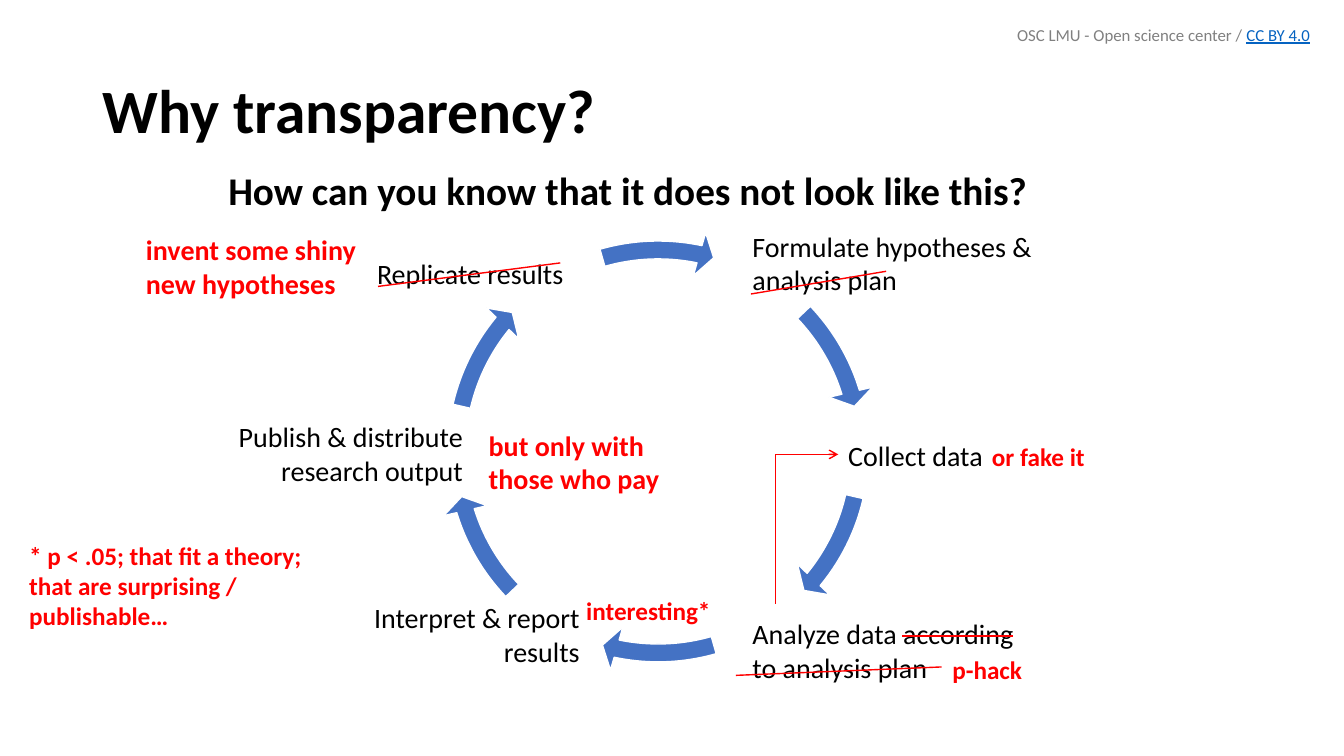
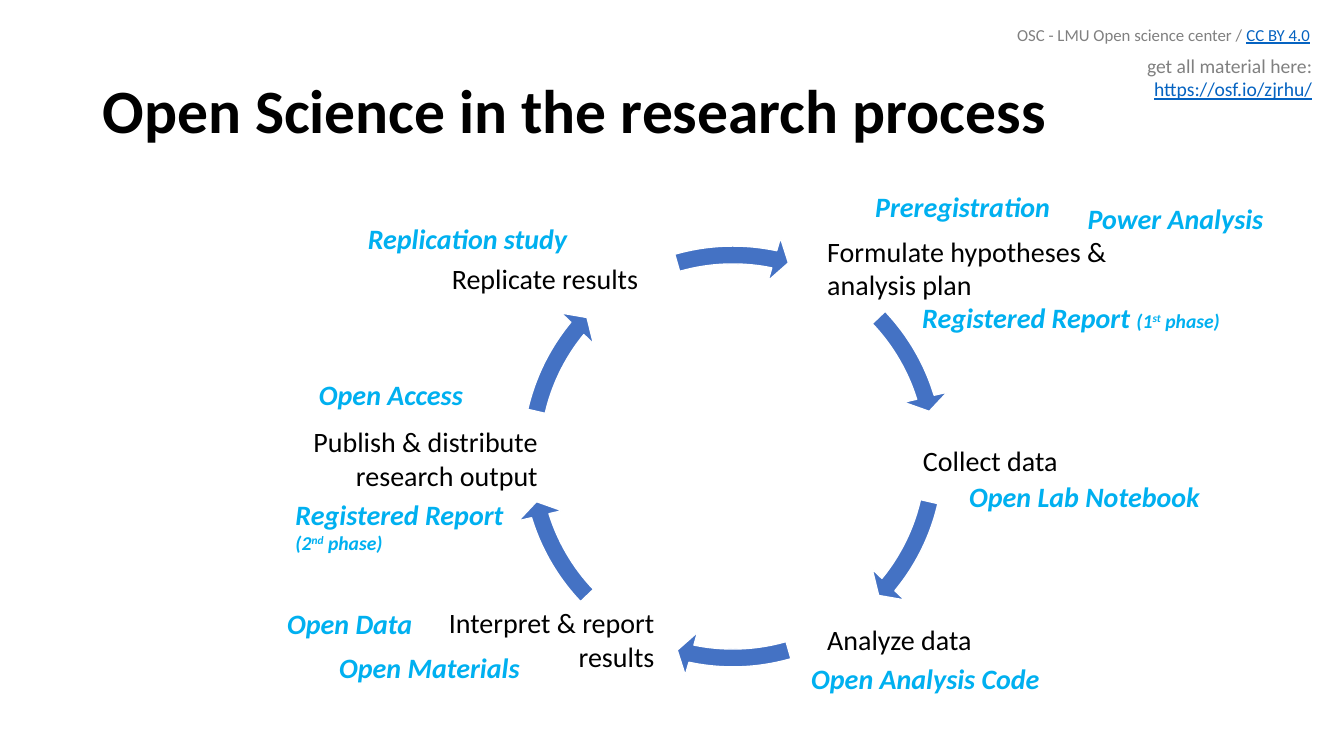
from lxml.etree import SubElement
from pptx import Presentation
from pptx.dml.color import RGBColor
from pptx.enum.shapes import MSO_CONNECTOR as Connector, MSO_SHAPE as Preset
from pptx.enum.text import MSO_ANCHOR as Anchor, MSO_AUTO_SIZE as AutoSize, PP_ALIGN as Align
from pptx.oxml.ns import qn
from pptx.util import Inches, Pt

# Grid: 160 columns by 90 rows of square cells
COLUMNS, ROWS = 160, 90
SLIDE_HEIGHT = Inches(7.5)
CELL = SLIDE_HEIGHT // ROWS
SLIDE_WIDTH = CELL * COLUMNS

BLACK = RGBColor(0x00, 0x00, 0x00)
WHITE = RGBColor(0xFF, 0xFF, 0xFF)
GREY = RGBColor(0x80, 0x80, 0x80)
RED = RGBColor(0xFF, 0x00, 0x00)
CYAN = RGBColor(0x00, 0xB0, 0xF0)
ARROW_BLUE = RGBColor(0x44, 0x72, 0xC4)
LINK_BLUE = RGBColor(0x05, 0x63, 0xC1)

# Text formats
TITLE = {"size": 44, "color": BLACK, "bold": True}
QUESTION = {"size": 28, "color": BLACK, "bold": True}
STEP = {"size": 20, "color": BLACK}
DOUBT = {"size": 20, "color": RED, "bold": True}
SMALL_DOUBT = {**DOUBT, "size": 18}
PRACTICE = {"size": 20, "color": CYAN, "bold": True, "italic": True}
PHASE = {"size": 14}
RAISED = {"size": 14, "raised": True}
CREDIT = {"size": 12, "color": GREY}
MATERIAL = {"size": 14, "color": GREY}
LINK = {"color": LINK_BLUE, "underline": True}

TITLE_BOX = (11, 4.8, 138, 17.4)
QUESTION_BOX = (26, 19.9, 100.6, 6)
CREDIT_BOX = (119.9, 2.3, 37.7, 3.6)
MATERIAL_BOX = (127.2, 5.8, 30.2, 6.8)
RING_SIZE = 53.3

# Tail and head angles of the arrows on one half of the ring
HALF_RING = [(316.38, 342.9), (12.94, 39.46), (73.97, 101.86)]

# Step labels, relative to the ring: box, alignment, paragraphs
STEPS = [
    ((36.7, -0.4, 36, 9.2), Align.LEFT, ["Formulate hypotheses &", "analysis plan"]),
    ((48.1, 24.5, 18.6, 5.3), Align.LEFT, ["Collect data"]),
    ((-8.6, 43.8, 27.1, 9.2), Align.RIGHT, ["Interpret & report", "results"]),
    ((-8, 2.8, 24.8, 5.3), Align.LEFT, ["Replicate results"]),
    ((-31.3, 22.3, 35.9, 9.2), Align.RIGHT, ["Publish & distribute research output"]),
]

# Notes, relative to the ring: box, format, paragraph
DOUBTS = [
    ((16.9, 43.2, 17.4, 4.8), SMALL_DOUBT, "interesting*"),
    ((5.3, 23.3, 23.6, 9.2), DOUBT, "but only with those who pay"),
    ((-49.4, 36.6, 35.3, 12.1), SMALL_DOUBT,
     "* p < .05; that fit a theory; that are surprising / publishable…"),
    ((-35.5, 0, 32.2, 9.2), DOUBT, "invent some shiny new hypotheses"),
    ((65.2, 24.9, 13.6, 4.8), SMALL_DOUBT, "or fake it"),
    ((60.5, 50.2, 10.8, 4.8), SMALL_DOUBT, "p-hack"),
]
PRACTICES = [
    ((42.4, -5.7, 23.4, 5.3), PRACTICE, "Preregistration"),
    ((67.7, -4.3, 23.4, 5.3), PRACTICE, "Power Analysis"),
    ((48, 7.5, 39.7, 5.3), PRACTICE,
     ["Registered Report ", ("(1", PHASE), ("st", RAISED), (" phase)", PHASE)]),
    ((53.6, 28.8, 30, 5.3), PRACTICE, "Open Lab Notebook"),
    ((34.8, 50.5, 29.8, 5.3), PRACTICE, "Open Analysis Code"),
    ((-27.6, 43.9, 17.4, 5.3), PRACTICE, "Open Data"),
    ((-21.4, 49.1, 24, 5.3), PRACTICE, "Open Materials"),
    ((-23.8, 16.6, 19.7, 5.3), PRACTICE, "Open Access"),
    ((-26.6, 30.9, 28.3, 8), PRACTICE,
     ["Registered Report ", ("(2", PHASE), ("nd", RAISED), (" phase)", PHASE)]),
    ((-18, -1.9, 26.3, 5.3), PRACTICE, "Replication study"),
]

# Red strokes, relative to the ring: start and end
STROKES = [
    (37.7, 7.9, 53.8, 5.2),
    (35.9, 53.3, 60.4, 52.3),
    (55.7, 48.6, 68.9, 48.6),
    (-6.7, 7, 15, 4.2),
]
BACK_TO_DATA = (40.6, 44.8, 48.1, 27)


def cells(*values):
    return [round(value * CELL) for value in values]


def shift(box, origin):
    return (box[0] + origin[0], box[1] + origin[1], *box[2:])


def format_run(run, style):
    values = {"name": "Calibri", **style}
    values["size"] = Pt(values["size"])
    color = values.pop("color")
    if values.pop("raised", False):
        run._r.get_or_add_rPr().set("baseline", "30000")
    for name, value in values.items():
        setattr(run.font, name, value)
    run.font.color.rgb = color


def fill_paragraph(paragraph, runs, style, align):
    paragraph.alignment = align
    for item in [runs] if isinstance(runs, str) else runs:
        text, extra = (item, {}) if isinstance(item, str) else item
        run = paragraph.add_run()
        run.text = text
        format_run(run, {**style, **extra})


def add_text(slide, box, paragraphs, style, align=Align.LEFT):
    frame = slide.shapes.add_textbox(*cells(*box)).text_frame
    # A single paragraph in a tall box runs over several lines
    frame.word_wrap = len(paragraphs) == 1 and box[3] > 6
    frame.auto_size = AutoSize.SHAPE_TO_FIT_TEXT
    for index, runs in enumerate(paragraphs):
        paragraph = frame.add_paragraph() if index else frame.paragraphs[0]
        fill_paragraph(paragraph, runs, style, align)
    return frame


def add_title(slide, text):
    title = slide.shapes.title
    places = zip(("left", "top", "width", "height"), cells(*TITLE_BOX))
    for name, value in places:
        setattr(title, name, value)
    frame = title.text_frame
    frame.auto_size = AutoSize.NONE
    frame.vertical_anchor = Anchor.MIDDLE
    paragraph = frame.paragraphs[0]
    paragraph.line_spacing = 0.9
    fill_paragraph(paragraph, text, TITLE, Align.LEFT)


def add_cycle(slide, origin, analyze_box, analyze_lines):
    # Ring of arrows
    for turn in (0, 180):
        for tail, head in HALF_RING:
            arrow = slide.shapes.add_shape(
                Preset.CIRCULAR_ARROW, *cells(*origin, RING_SIZE, RING_SIZE))
            arrow.shadow.inherit = False
            arrow.fill.solid()
            arrow.fill.fore_color.rgb = ARROW_BLUE
            arrow.line.color.rgb = WHITE
            arrow.line.width = Pt(1)
            # Angles count 60000 to the degree, adjustments 100000 to one
            angles = [(angle + turn) % 360 * 0.6 for angle in (head, tail)]
            for index, value in enumerate([0.04, 2.5, *angles, 0.05]):
                arrow.adjustments[index] = value
    # Step labels
    for box, align, lines in [*STEPS, (analyze_box, Align.LEFT, analyze_lines)]:
        add_text(slide, shift(box, origin), lines, STEP, align)


def add_notes(slide, origin, notes):
    for box, style, runs in notes:
        add_text(slide, shift(box, origin), [runs], style)


def add_line(slide, kind, points):
    line = slide.shapes.add_connector(kind, *cells(*points))
    line.line.color.rgb = RED
    line.line.width = Pt(1)
    SubElement(line._element.spPr, qn("a:effectLst"))
    return line


def add_strokes(slide, origin):
    x, y = origin
    for x1, y1, x2, y2 in STROKES:
        add_line(slide, Connector.STRAIGHT, (x + x1, y + y1, x + x2, y + y2))


def add_back_arrow(slide, origin):
    x1, y1, x2, y2 = BACK_TO_DATA
    length, depth = y1 - y2, x2 - x1
    # The elbow is laid flat around its centre, then turned a quarter
    left = origin[0] + (x1 + x2 - length) / 2
    top = origin[1] + (y1 + y2 - depth) / 2
    elbow = add_line(slide, Connector.ELBOW, (left, top, left + length, top + depth))
    properties = elbow._element.spPr
    properties.find(qn("a:prstGeom")).set("prst", "bentConnector2")
    for name, value in {"rot": "5400000", "flipH": "1", "flipV": "1"}.items():
        properties.find(qn("a:xfrm")).set(name, value)
    SubElement(properties.find(qn("a:ln")), qn("a:tailEnd"), type="arrow")


def new_slide(presentation, title, credit):
    slide = presentation.slides.add_slide(presentation.slide_layouts[5])
    add_title(slide, title)
    add_text(slide, CREDIT_BOX, [[credit + " / ", ("CC BY 4.0", LINK)]], CREDIT)
    return slide


def build_transparency(presentation):
    slide = new_slide(presentation, "Why transparency?", "OSC LMU - Open science center")
    origin = (51.7, 27.1)
    question = add_text(slide, QUESTION_BOX,
                        ["How can you know that it does not look like this?"], QUESTION)
    question.paragraphs[0].line_spacing = 0.9
    add_cycle(slide, origin, (36.7, 45.7, 33.8, 9.2),
              ["Analyze data according", "to analysis plan"])
    add_strokes(slide, origin)
    add_back_arrow(slide, origin)
    add_notes(slide, origin, DOUBTS)


def build_open_science(presentation):
    slide = new_slide(presentation, "Open Science in the research process",
                      "OSC - LMU Open science center")
    origin = (60.6, 27.7)
    add_cycle(slide, origin, (36.7, 45.8, 19.8, 5.3), ["Analyze data"])
    add_notes(slide, origin, PRACTICES)
    add_text(slide, MATERIAL_BOX,
             [["get all material here: ", ("https://osf.io/zjrhu/", LINK)]],
             MATERIAL, Align.RIGHT)


def main():
    presentation = Presentation()
    presentation.slide_width = SLIDE_WIDTH
    presentation.slide_height = SLIDE_HEIGHT
    build_transparency(presentation)
    build_open_science(presentation)
    presentation.save("out.pptx")


if __name__ == "__main__":
    main()
